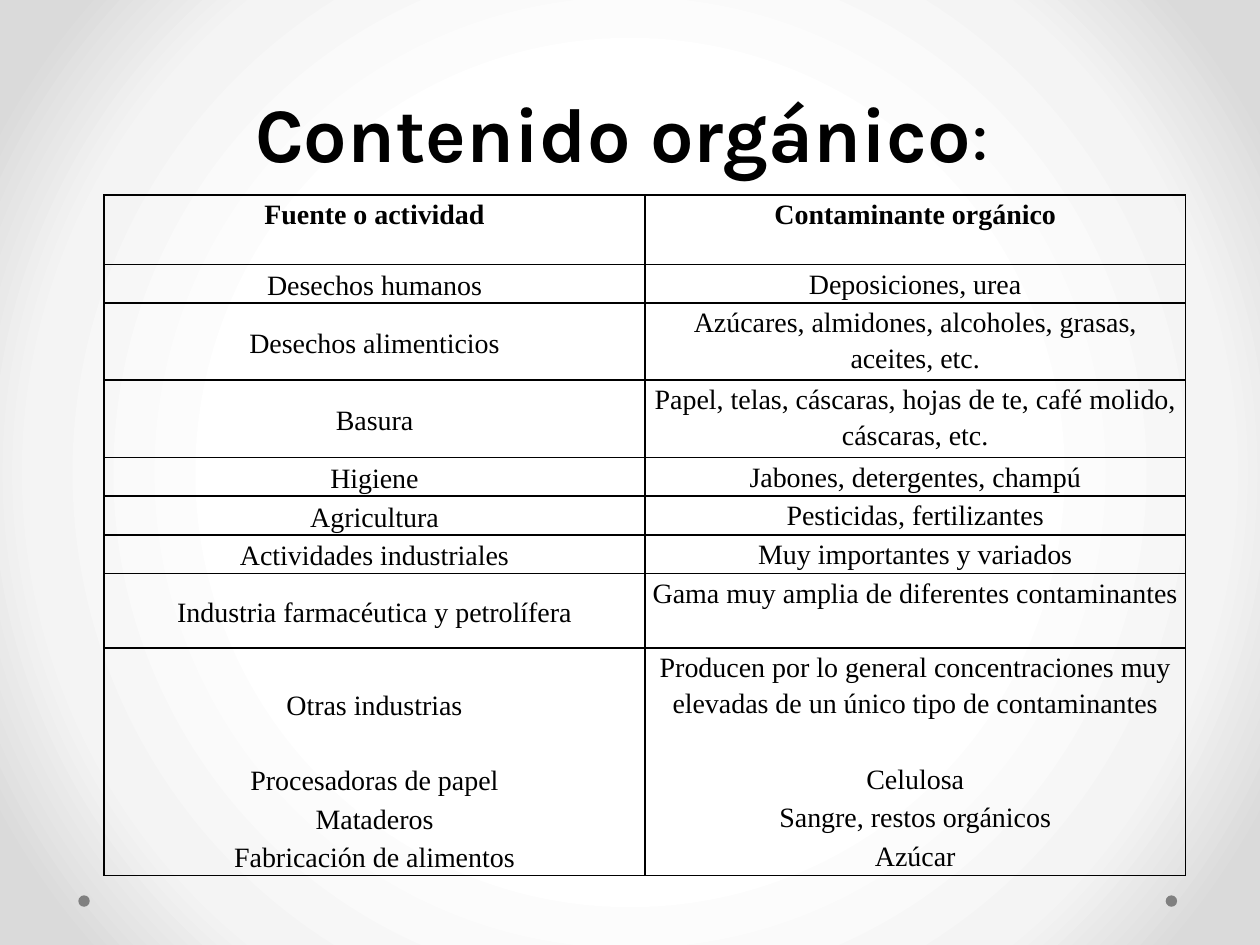
from lxml import etree
from pptx import Presentation, util as u
from pptx.dml.color import RGBColor
from pptx.enum import shapes, text
from pptx.oxml.ns import qn

BLACK = RGBColor(0x00, 0x00, 0x00)
GRAY = RGBColor(0x80, 0x80, 0x80)
GLOW = [(50, RGBColor(0xFF, 0xFF, 0xFF)), (76, RGBColor(0xF4, 0xF4, 0xF4)),
        (92, RGBColor(0xDA, 0xDA, 0xDA))]


def add_run(paragraph, words, font, size, bold):
    run = paragraph.add_run()
    run.text = words
    run.font.name = font
    run.font.size = u.Pt(size)
    run.font.bold = bold
    run.font.color.rgb = BLACK


def add_border(cell, side, visible):
    line = etree.SubElement(cell._tc.get_or_add_tcPr(), qn("a:ln" + side), w=str(u.Pt(1)))
    if visible:
        fill = etree.SubElement(line, qn("a:solidFill"))
        etree.SubElement(fill, qn("a:srgbClr"), val=str(BLACK))
    else:
        etree.SubElement(line, qn("a:noFill"))


deck = Presentation()
deck.slide_width, deck.slide_height = u.Cm(25.4), u.Cm(19.05)
slide = deck.slides.add_slide(deck.slide_layouts[6])

# Radial background
slide.background.fill.gradient()
glow = slide.element.find(".//" + qn("a:gradFill"))
for part in list(glow):
    glow.remove(part)
stops = etree.SubElement(glow, qn("a:gsLst"))
for position, color in GLOW:
    stop = etree.SubElement(stops, qn("a:gs"), pos=str(position * 1000))
    etree.SubElement(stop, qn("a:srgbClr"), val=str(color))
circle = etree.SubElement(glow, qn("a:path"), path="circle")
etree.SubElement(circle, qn("a:fillToRect"), l="50000", t="50000", r="50000", b="50000")

# Footer dots
for left in (23.5, 1.58):
    dot = slide.shapes.add_shape(shapes.MSO_SHAPE.OVAL, u.Cm(left), u.Cm(18.05),
                                 u.Cm(0.23), u.Cm(0.23))
    dot.shadow.inherit = False
    dot.fill.solid()
    dot.fill.fore_color.rgb = GRAY
    dot.line.fill.background()

# Title
title = slide.shapes.add_textbox(u.Cm(1.3), u.Cm(0.74), u.Cm(22.86), u.Cm(2.97)).text_frame
title.word_wrap = True
title.vertical_anchor = text.MSO_ANCHOR.BOTTOM
heading = title.paragraphs[0]
heading.alignment = text.PP_ALIGN.CENTER
heading.line_spacing = u.Pt(58)
add_run(heading, "Contenido orgánico", "Karla", 44, True)
add_run(heading, ": ", "Karla", 44, False)

# Sources and their contaminants, with row heights in cm
rows = [
    (1.4, "Fuente o actividad", "Contaminante orgánico"),
    (0.75, "Desechos humanos", "Deposiciones, urea"),
    (1.5, "Desechos alimenticios", "Azúcares, almidones, alcoholes, grasas, aceites, etc."),
    (1.5, "Basura", "Papel, telas, cáscaras, hojas de te, café molido, cáscaras, etc."),
    (0.75, "Higiene", "Jabones, detergentes, champú"),
    (0.75, "Agricultura", "Pesticidas, fertilizantes"),
    (0.75, "Actividades industriales", "Muy importantes y variados"),
    (1.5, "Industria farmacéutica y petrolífera", "Gama muy amplia de diferentes contaminantes"),
    (2.25, "Otras industrias",
     "Producen por lo general concentraciones muy elevadas de un único tipo de contaminantes"),
    (0.75, "Procesadoras de papel", "Celulosa"),
    (0.75, "Mataderos", "Sangre, restos orgánicos"),
    (0.75, "Fabricación de alimentos", "Azúcar"),
]
OTHERS = 8  # from this row on, the rows form one open block
last = len(rows) - 1
sources = slide.shapes.add_table(len(rows), 2, u.Cm(2.1), u.Cm(3.93), u.Cm(21.8),
                                 u.Cm(sum(row[0] for row in rows))).table
sources.horz_banding = False
sources.first_row = False
for column in sources.columns:
    column.width = u.Cm(10.9)

for r, (height, *entries) in enumerate(rows):
    sources.rows[r].height = u.Cm(height)
    for c, entry in enumerate(entries):
        cell = sources.cell(r, c)
        cell.margin_left = cell.margin_right = u.Cm(0.13)
        cell.margin_top = cell.margin_bottom = 0
        centred = c == 0 and r > 0
        cell.vertical_anchor = text.MSO_ANCHOR.MIDDLE if centred else text.MSO_ANCHOR.TOP
        add_border(cell, "L", True)
        add_border(cell, "R", True)
        add_border(cell, "T", r <= OTHERS)
        add_border(cell, "B", r < OTHERS or r == last)
        cell.fill.background()
        line = cell.text_frame.paragraphs[0]
        line.alignment = text.PP_ALIGN.CENTER
        line.line_spacing = 1.15
        add_run(line, entry, "Times New Roman", 16, r == 0)

deck.save("out.pptx")
